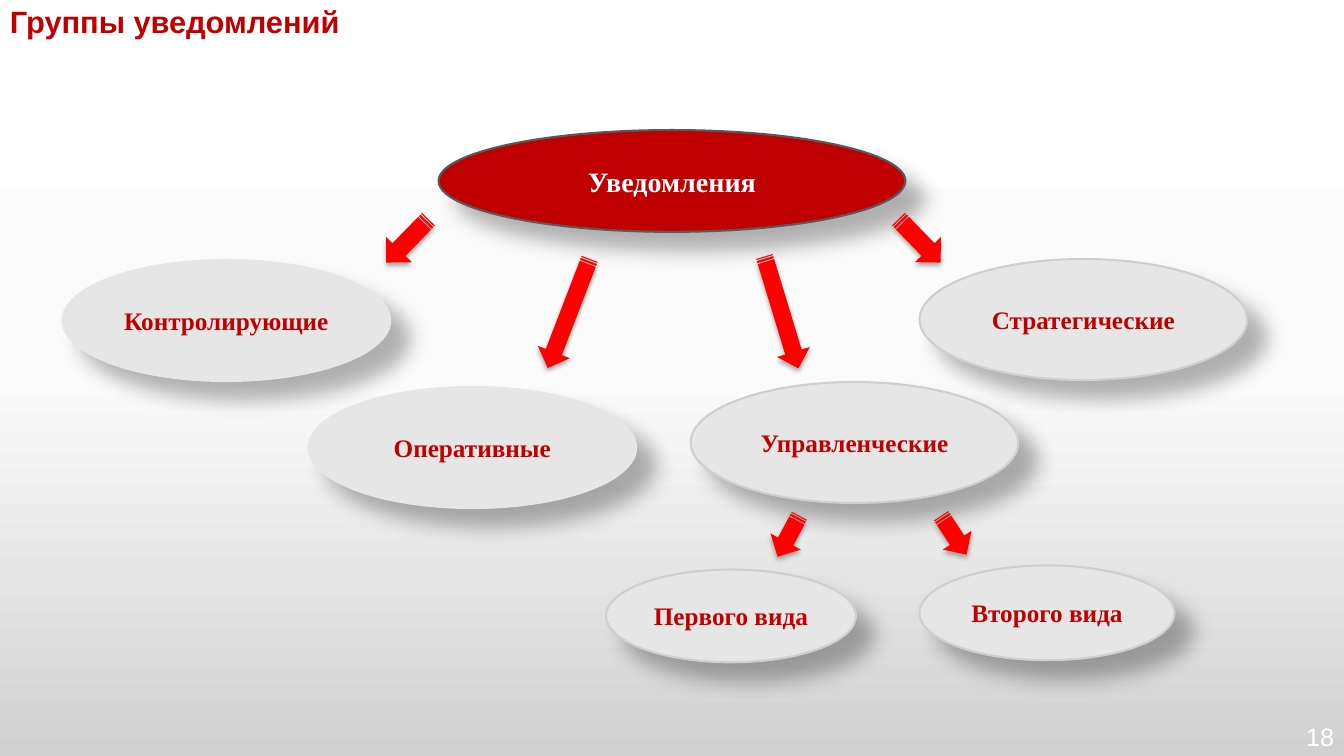
"""Build the slide showing the groups of notifications."""
from copy import deepcopy
from dataclasses import dataclass

from lxml import etree
from pptx import Presentation
from pptx import util as u
from pptx.dml.color import RGBColor
from pptx.enum import shapes, text
from pptx.oxml.ns import qn

PX = 9144


@dataclass(frozen=True)
class Shadow:
    opacity: int
    blur: float
    distance: float
    angle: int


@dataclass(frozen=True)
class Theme:
    red: str = "C00000"
    arrow: str = "FF0000"
    white: str = "FFFFFF"
    pale: str = "E7E6E6"
    rim: str = "D0CECE"
    dark_rim: str = "595959"
    shade: str = "000000"
    backdrop: tuple = ((0, "FFFFFF"), (0.5, "FBFBFB"), (1, "D1D1D1"))
    sans: str = "Arial"
    serif: str = "Times New Roman"
    title_size: int = 22
    root_size: int = 20
    label_size: int = 18
    rim_width: float = 1.5
    node_shadow: Shadow = Shadow(30, 15, 18, 45)
    arrow_shadow: Shadow = Shadow(32, 3.5, 2.2, 90)


THEME = Theme()


@dataclass(frozen=True)
class Node:
    label: str
    left: int
    top: int
    width: int = 325
    height: int = 120
    rim: str = THEME.rim
    fill: str = THEME.pale
    color: str = THEME.red
    size: int = THEME.label_size


@dataclass(frozen=True)
class Arrow:
    left: int
    top: int
    width: int
    height: int
    rotation: float


NODES = (
    Node("Уведомления", 435, 129, 463, 101, THEME.dark_rim, THEME.red, THEME.white, THEME.root_size),
    Node("Контролирующие", 62, 258, rim=THEME.pale),
    Node("Оперативные", 306, 384, rim=THEME.pale),
    Node("Управленческие", 685, 379),
    Node("Стратегические", 912, 257),
    Node("Первого вида", 601, 565, 248, 92),
    Node("Второго вида", 912, 561, 253, 94),
)

ARROWS = (
    Arrow(506, 294, 116, 34, 111),
    Arrow(882, 221, 60, 36, 45.9),
    Arrow(717, 293, 116, 34, 73.1),
    Arrow(374, 221, 60, 36, 134.3),
    Arrow(923, 514, 46, 34, 56.7),
    Arrow(759, 515, 46, 34, 118),
)


def rgb(value: str) -> RGBColor:
    """Return a colour from its hexadecimal form."""
    return RGBColor.from_string(value)


def box(*lengths: int) -> tuple:
    """Convert px lengths to EMU."""
    return tuple(u.Emu(length * PX) for length in lengths)


def write(frame, wording: str, *, size: int, color: str, font: str, bold: bool = True,
          align=text.PP_ALIGN.CENTER, spacing: float | None = None, wrap: bool = True) -> None:
    """Fill a text frame with one formatted, vertically centred paragraph."""
    frame.word_wrap = wrap
    frame.vertical_anchor = text.MSO_ANCHOR.MIDDLE
    paragraph = frame.paragraphs[0]
    paragraph.alignment = align
    paragraph.line_spacing = spacing
    run = paragraph.add_run()
    run.text = wording
    run.font.size = u.Pt(size)
    run.font.name = font
    run.font.bold = bold
    run.font.color.rgb = rgb(color)


def cast_shadow(shape, shadow: Shadow) -> None:
    """Give a shape a soft outer shadow."""
    shape.shadow.inherit = False
    effects = shape.element.spPr.find(qn("a:effectLst"))
    outer = etree.SubElement(
        effects, qn("a:outerShdw"), blurRad=str(u.Pt(shadow.blur)), dist=str(u.Pt(shadow.distance)),
        dir=str(shadow.angle * 60000), algn="ctr", rotWithShape="0")
    shade = etree.SubElement(outer, qn("a:srgbClr"), val=THEME.shade)
    etree.SubElement(shade, qn("a:alpha"), val=str(shadow.opacity * 1000))


def paint_background(slide) -> None:
    """Apply the vertical gradient to the slide background."""
    fill = slide.background.fill
    fill.gradient()
    fill.gradient_angle = 270
    stops = slide.element.find(".//" + qn("a:gsLst"))
    stops.append(deepcopy(stops[0]))
    for stop, (position, color) in zip(fill.gradient_stops, THEME.backdrop):
        stop.position = position
        stop.color.rgb = rgb(color)


def draw_node(slide, node: Node) -> None:
    """Draw a labelled ellipse."""
    ellipse = slide.shapes.add_shape(
        shapes.MSO_SHAPE.OVAL, *box(node.left, node.top, node.width, node.height))
    ellipse.fill.solid()
    ellipse.fill.fore_color.rgb = rgb(node.fill)
    ellipse.line.color.rgb = rgb(node.rim)
    ellipse.line.width = u.Pt(THEME.rim_width)
    cast_shadow(ellipse, THEME.node_shadow)
    write(ellipse.text_frame, node.label, size=node.size, color=node.color, font=THEME.serif)


def draw_arrow(slide, arrow: Arrow) -> None:
    """Draw a rotated striped arrow."""
    striped = slide.shapes.add_shape(
        shapes.MSO_SHAPE.STRIPED_RIGHT_ARROW, *box(arrow.left, arrow.top, arrow.width, arrow.height))
    striped.rotation = arrow.rotation
    striped.fill.solid()
    striped.fill.fore_color.rgb = rgb(THEME.arrow)
    striped.line.fill.background()
    cast_shadow(striped, THEME.arrow_shadow)


def main() -> None:
    """Assemble and save the slide."""
    deck = Presentation()
    deck.slide_width, deck.slide_height = box(1333, 750)
    slide = deck.slides.add_slide(deck.slide_layouts[6])
    paint_background(slide)

    title = slide.shapes.add_textbox(*box(0, 2, 360, 43)).text_frame
    write(title, "Группы уведомлений", size=THEME.title_size, color=THEME.red, font=THEME.sans,
          align=text.PP_ALIGN.LEFT, spacing=0.9, wrap=False)
    title.auto_size = text.MSO_AUTO_SIZE.SHAPE_TO_FIT_TEXT

    page_number = slide.shapes.add_textbox(*box(1275, 712, 58, 38)).text_frame
    write(page_number, "18", size=THEME.label_size, color=THEME.white, font=THEME.sans,
          bold=False, align=text.PP_ALIGN.RIGHT)

    for node in NODES:
        draw_node(slide, node)
    for arrow in ARROWS:
        draw_arrow(slide, arrow)
    deck.save("out.pptx")


if __name__ == "__main__":
    main()
